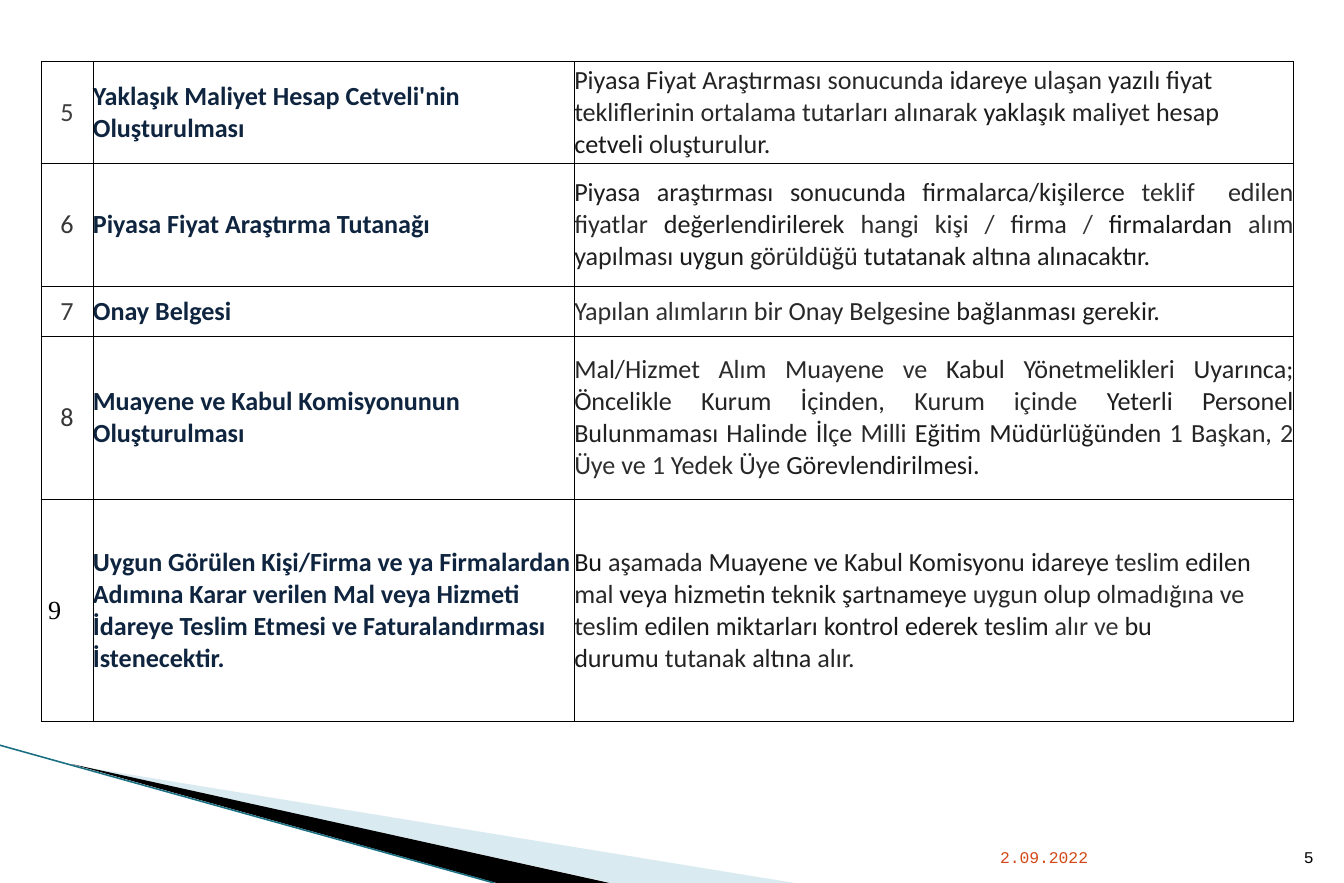
import copy
from dataclasses import dataclass

import lxml.etree
import pptx
import pptx.dml.color
import pptx.enum.shapes
import pptx.enum.text
import pptx.oxml.ns
import pptx.util

Inches, Pt = pptx.util.Inches, pptx.util.Pt
RGBColor = pptx.dml.color.RGBColor
ALIGN = pptx.enum.text.PP_ALIGN
ANCHOR = pptx.enum.text.MSO_ANCHOR
qn = pptx.oxml.ns.qn

BLACK = RGBColor(0, 0, 0)
NAVY = RGBColor(0x0F, 0x25, 0x3F)
ORANGE = RGBColor(0xD3, 0x48, 0x17)
PALE_BLUE = RGBColor(0xA0, 0xCB, 0xDC)
TEAL = RGBColor(0x1B, 0x6F, 0x82)


@dataclass
class Step:
    number: str
    grey: int
    height: float
    title: str
    details: list[tuple[int, str]]  # grey level and words; "\n" breaks the line
    align: ALIGN = ALIGN.LEFT
    number_font: str = "Calibri"
    number_align: ALIGN = ALIGN.CENTER
    number_indent: float = 0


@dataclass
class Wedge:
    box: tuple[float, float, float, float]  # frame; the outline may run past it
    points: list[tuple[float, float]]
    color: RGBColor
    alpha: int


COLUMN_WIDTHS = [0.44, 4.09, 6.11]
STEPS = [
    Step("5", 0x3F, 0.87, "Yaklaşık Maliyet Hesap Cetveli'nin Oluşturulması", [
        (0x21, "Piyasa "), (0x23, "Fiyat Araştırması "), (0x28, "sonucunda "),
        (0x1F, "idareye "), (0x28, "ulaşan "), (0x1D, "yazılı "), (0x21, "fiyat "),
        (0x24, "tekliflerinin "), (0x2A, "ortalama "), (0x28, "tutarları alınarak "),
        (0x1C, "yaklaşık "), (0x26, "maliyet "), (0x21, "hesap "), (0x18, "cetveli "),
        (0x21, "oluşturulur.")]),
    Step("6", 0x36, 1.04, "Piyasa Fiyat Araştırma Tutanağı", [
        (0x1D, "Piyasa "), (0x1F, "araştırması "),
        (0x21, "sonucunda firmalarca/kişilerce "), (0x2F, "teklif  "),
        (0x2A, "edilen fiyatlar "), (0x1D, "değerlendirilerek "), (0x2D, "hangi "),
        (0x2A, "kişi "), (0x31, "/ "), (0x24, "firma "), (0x36, "/ "),
        (0x18, "firmalardan "), (0x2F, "alım "), (0x21, "yapılması "),
        (0x1A, "uygun "), (0x26, "görüldüğü "), (0x1A, "tutatanak "),
        (0x21, "altına "), (0x1C, "alınacaktır.")], ALIGN.JUSTIFY),
    Step("7", 0x3D, 0.43, "Onay Belgesi", [
        (0x2D, "Yapılan "), (0x31, "alımların "), (0x28, "bir Onay "),
        (0x26, "Belgesine "), (0x1C, "bağlanması "), (0x1F, "gerekir.")]),
    Step("8", 0x36, 1.38, "Muayene ve Kabul Komisyonunun Oluşturulması", [
        (0x28, "Mal/Hizmet "), (0x2B, "Alım "), (0x2A, "Muayene "), (0x2F, "ve "),
        (0x23, "Kabul "), (0x26, "Yönetmelikleri "), (0x24, "Uyarınca; "),
        (0x23, "Öncelikle Kurum İçinden, "), (0x2A, "Kurum içinde "),
        (0x1D, "Yeterli "), (0x21, "Personel Bulunmaması Halinde "),
        (0x23, "İlçe "), (0x28, "Milli "), (0x1C, "Eğitim "),
        (0x1D, "Müdürlüğünden "), (0x26, "1 "), (0x28, "Başkan, "), (0x31, "2 "),
        (0x2F, "Üye "), (0x2A, "ve "), (0x31, "1 "), (0x2A, "Yedek "),
        (0x28, "Üye "), (0x1D, "Görevlendirilmesi.")], ALIGN.JUSTIFY),
    Step("9", 0, 1.89,
         "Uygun Görülen Kişi/Firma ve ya Firmalardan Adımına Karar verilen Mal veya "
         "Hizmeti İdareye Teslim Etmesi ve Faturalandırması İstenecektir.", [
             (0x15, "Bu "), (0x26, "aşamada "), (0x1C, "Muayene "), (0x1A, "ve "),
             (0x1F, "Kabul Komisyonu "), (0x1C, "idareye "), (0x28, "teslim "),
             (0x1D, "edilen "), (0x28, "mal "), (0x1A, "veya "), (0x1C, "hizmetin "),
             (0x1D, "teknik şartnameye "), (0x2B, "uygun "), (0x23, "olup "),
             (0x28, "olmadığına "), (0x2A, "ve "), (0x26, "teslim "),
             (0x1C, "edilen "), (0x1D, "miktarları "), (0x1A, "kontrol "),
             (0x16, "ederek "), (0x1D, "teslim "), (0x2F, "alır "), (0x33, "ve "),
             (0x1C, "bu\n"), (0x1D, "durumu "), (0x26, "tutanak "),
             (0x21, "altına "), (0x28, "alır.")],
         number_font="Times New Roman", number_align=ALIGN.LEFT, number_indent=0.06),
]
WEDGES = [
    Wedge((0.89, 5.47, 4.75, 1.58), [(0.62, 6.5), (6.75, 7.5), (5.2, 7.5)],
          PALE_BLUE, 40),
    Wedge((-0.07, 6.33, 4.75, 0.92), [(0.61, 6.49), (5.18, 7.5), (4.22, 7.5)],
          BLACK, 100),
]


def grey(level: int) -> RGBColor:
    return RGBColor(level, level, level)


def add_text(p, text: str, *, color: RGBColor, size: float = 16,
             font: str = "Calibri", bold: bool = False) -> None:
    r = p.add_run()
    r.text = text.rstrip("\n")
    r.font.size, r.font.name, r.font.bold = Pt(size), font, bold
    r.font.color.rgb = color
    if text.endswith("\n"):
        p.add_line_break()
        p._p[-1].append(copy.deepcopy(r._r.rPr))


def format_cell(cell, align: ALIGN, indent: float = 0):
    """Set borders, margins and alignment; return the cell's paragraph."""
    tcPr = cell._tc.get_or_add_tcPr()
    for side in ("a:lnL", "a:lnR", "a:lnT", "a:lnB"):
        ln = lxml.etree.SubElement(tcPr, qn(side), w=str(Pt(0.5)))
        fill = lxml.etree.SubElement(ln, qn("a:solidFill"))
        lxml.etree.SubElement(fill, qn("a:srgbClr"), val=str(BLACK))
    cell.fill.background()
    cell.margin_left = Inches(indent)
    cell.margin_right = cell.margin_top = cell.margin_bottom = 0
    cell.vertical_anchor = ANCHOR.MIDDLE
    p = cell.text_frame.paragraphs[0]
    p.alignment = align
    return p


def add_steps(s) -> None:
    table = s.shapes.add_table(
        len(STEPS), len(COLUMN_WIDTHS), Inches(0.35), Inches(0.52),
        Inches(sum(COLUMN_WIDTHS)), Inches(sum(step.height for step in STEPS))).table
    table.first_row = table.horz_banding = False
    for column, width in zip(table.columns, COLUMN_WIDTHS):
        column.width = Inches(width)
    for row, step in zip(table.rows, STEPS):
        row.height = Inches(step.height)
        number, title, details = row.cells
        add_text(format_cell(number, step.number_align, step.number_indent),
                 step.number, color=grey(step.grey), font=step.number_font)
        add_text(format_cell(title, ALIGN.LEFT), step.title, color=NAVY, bold=True)
        p = format_cell(details, step.align)
        for level, words in step.details:
            add_text(p, words, color=grey(level))


def add_wedge(s, wedge: Wedge) -> None:
    start, *rest = [(Inches(x), Inches(y)) for x, y in wedge.points]
    builder = s.shapes.build_freeform(*start)
    builder.add_line_segments(rest)
    sp = builder.convert_to_shape()
    # Move the frame while the outline stays in place
    left, top, width, height = map(Inches, wedge.box)
    outline = sp._element.spPr.find(".//" + qn("a:path"))
    for pt in outline.iter(qn("a:pt")):
        pt.set("x", str(int(pt.get("x")) + sp.left - left))
        pt.set("y", str(int(pt.get("y")) + sp.top - top))
    outline.set("w", str(width))
    outline.set("h", str(height))
    sp.left, sp.top, sp.width, sp.height = left, top, width, height
    sp.shadow.inherit = False
    sp.fill.solid()
    sp.fill.fore_color.rgb = wedge.color
    sp.line.fill.background()
    if wedge.alpha < 100:
        color = sp._element.spPr.find(".//" + qn("a:srgbClr"))
        lxml.etree.SubElement(color, qn("a:alpha"), val=str(wedge.alpha * 1000))


def add_edge(s) -> None:
    line = s.shapes.add_connector(pptx.enum.shapes.MSO_CONNECTOR.STRAIGHT,
                                  0, Inches(6.33), Inches(4.2), Inches(7.5))
    line.line.color.rgb = TEAL
    line.line.width = Pt(0.95)
    lxml.etree.SubElement(line._element.spPr, qn("a:effectLst"))


def add_footer(s, text: str, left: float, width: float, *, color: RGBColor,
               align: ALIGN) -> None:
    sp = s.shapes.add_textbox(Inches(left), Inches(7.01), Inches(width), Inches(0.4))
    tf = sp.text_frame
    tf.word_wrap = True
    tf.vertical_anchor = ANCHOR.BOTTOM
    p = tf.paragraphs[0]
    p.alignment = align
    add_text(p, text, color=color, size=10, font="Courier New")


def main() -> None:
    prs = pptx.Presentation()
    prs.slide_width, prs.slide_height = Inches(11.42), Inches(7.5)
    s = prs.slides.add_slide(prs.slide_layouts[6])

    for wedge in WEDGES:  # corner decoration
        add_wedge(s, wedge)
    add_edge(s)

    # Date and page number
    add_footer(s, "2.09.2022", 8.4, 2.4, color=ORANGE, align=ALIGN.LEFT)
    add_footer(s, "5", 10.8, 0.46, color=BLACK, align=ALIGN.RIGHT)

    add_steps(s)  # procurement steps
    prs.save("out.pptx")


if __name__ == "__main__":
    main()
